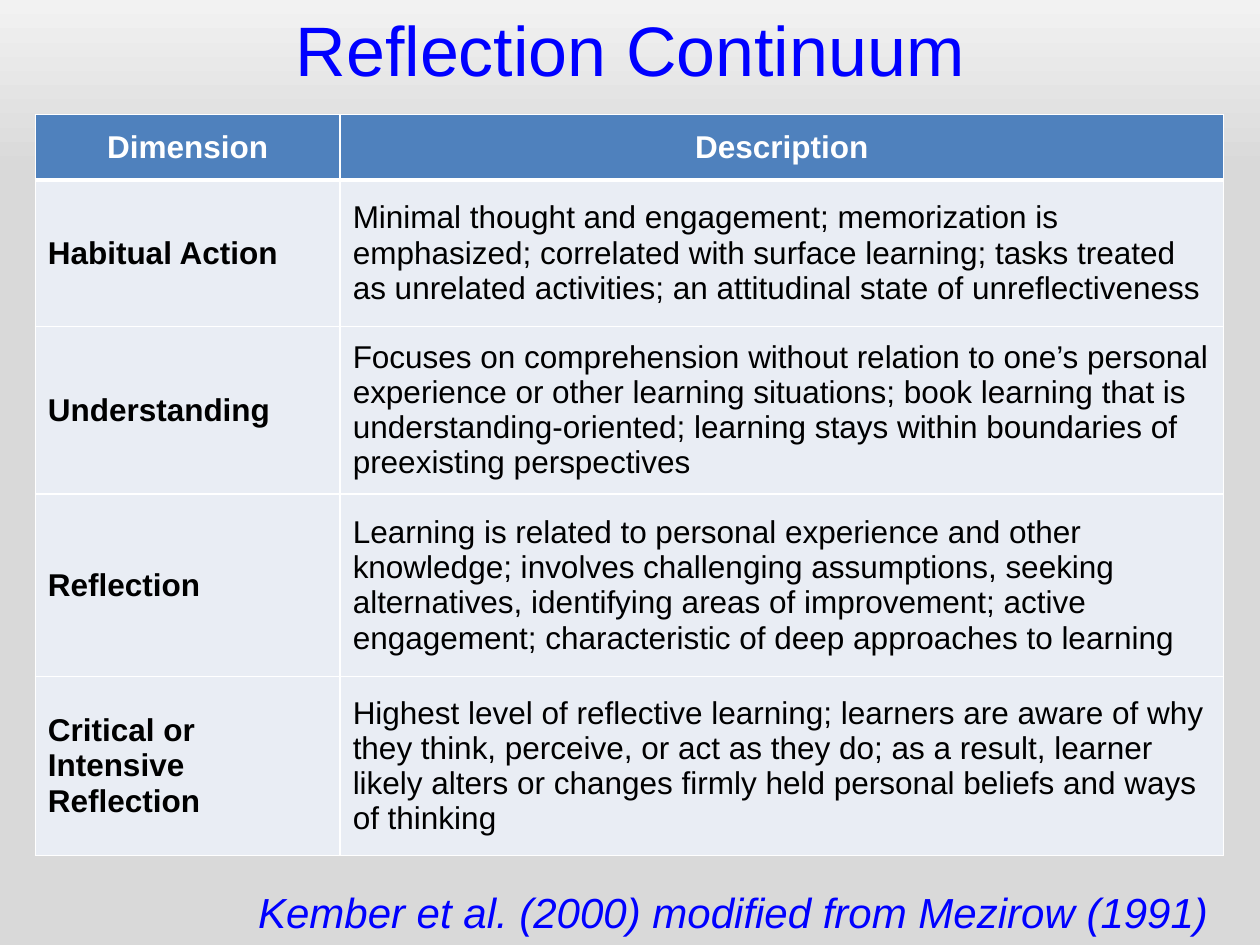
import dataclasses

import lxml.etree
import pptx
import pptx.dml.color
import pptx.enum.text
import pptx.oxml.ns
import pptx.util

Inches = pptx.util.Inches
Pt = pptx.util.Pt
ALIGN = pptx.enum.text.PP_ALIGN
ANCHOR = pptx.enum.text.MSO_ANCHOR
AUTO_SIZE = pptx.enum.text.MSO_AUTO_SIZE

FONT = "Arial"
COLORS = {
    "accent": "0000FF",
    "header": "4F81BD",
    "body": "E9EDF4",
    "border": "FFFFFF",
    "header_text": "FFFFFF",
    "body_text": "000000",
    "top": "F2F2F2",
    "base": "D9D9D9",
}
COLUMN_WIDTHS = (2.42, 7.01)
HEADER_HEIGHT = 0.52


@dataclasses.dataclass(frozen=True)
class Level:
    dimension: str
    description: str
    height: float


LEVELS = (
    Level(
        "Habitual Action",
        "Minimal thought and engagement; memorization is emphasized; "
        "correlated with surface learning; tasks treated as unrelated "
        "activities; an attitudinal state of unreflectiveness",
        1.16,
    ),
    Level(
        "Understanding",
        "Focuses on comprehension without relation to one’s personal "
        "experience or other learning situations; book learning that is "
        "understanding-oriented; learning stays within boundaries of "
        "preexisting perspectives",
        1.33,
    ),
    Level(
        "Reflection",
        "Learning is related to personal experience and other knowledge; "
        "involves challenging assumptions, seeking alternatives, identifying "
        "areas of improvement; active engagement; characteristic of deep "
        "approaches to learning",
        1.45,
    ),
    Level(
        "Critical or Intensive Reflection",
        "Highest level of reflective learning; learners are aware of why they "
        "think, perceive, or act as they do; as a result, learner likely "
        "alters or changes firmly held personal beliefs and ways of thinking",
        1.42,
    ),
)


def rgb(name: str) -> pptx.dml.color.RGBColor:
    return pptx.dml.color.RGBColor.from_string(COLORS[name])


def write(frame, text: str, size: int, color: str, align=ALIGN.LEFT,
          bold: bool = False, italic: bool = False) -> None:
    paragraph = frame.paragraphs[0]
    paragraph.alignment = align
    run = paragraph.add_run()
    run.text = text
    run.font.name = FONT
    run.font.size = Pt(size)
    run.font.bold = bold
    run.font.italic = italic
    run.font.color.rgb = rgb(color)


def set_borders(cell, bottom_width: int) -> None:
    qn = pptx.oxml.ns.qn
    properties = cell._tc.get_or_add_tcPr()
    widths = {"lnL": 1, "lnR": 1, "lnT": 1, "lnB": bottom_width}
    for position, (side, width) in enumerate(widths.items()):
        line = lxml.etree.Element(qn(f"a:{side}"), w=str(Pt(width)))
        fill = lxml.etree.SubElement(line, qn("a:solidFill"))
        lxml.etree.SubElement(fill, qn("a:srgbClr"), val=COLORS["border"])
        properties.insert(position, line)


def fill_cell(cell, text: str, header: bool, bold: bool) -> None:
    kind = "header" if header else "body"
    cell.vertical_anchor = ANCHOR.MIDDLE
    cell.fill.solid()
    cell.fill.fore_color.rgb = rgb(kind)
    set_borders(cell, 3 if header else 1)
    write(cell.text_frame, text, 18, f"{kind}_text",
          ALIGN.CENTER if header else ALIGN.LEFT, bold)


def paint_background(slide) -> None:
    fill = slide.background.fill
    fill.gradient()
    fill.gradient_angle = 270
    for stop, color, position in zip(fill.gradient_stops, ("top", "base"), (0, 0.18)):
        stop.color.rgb = rgb(color)
        stop.position = position


def add_title(slide) -> None:
    title = slide.shapes.title
    title.left, title.top = Inches(0), Inches(0)
    title.width, title.height = Inches(10), Inches(0.77)
    title.text_frame.vertical_anchor = ANCHOR.TOP
    title.text_frame.auto_size = AUTO_SIZE.SHAPE_TO_FIT_TEXT
    write(title.text_frame, "Reflection Continuum", 40, "accent", ALIGN.CENTER)


def add_continuum(slide) -> None:
    heights = [HEADER_HEIGHT, *(level.height for level in LEVELS)]
    rows = [("Dimension", "Description"),
            *((level.dimension, level.description) for level in LEVELS)]
    continuum = slide.shapes.add_table(
        len(rows), len(COLUMN_WIDTHS), Inches(0.28), Inches(0.91),
        Inches(sum(COLUMN_WIDTHS)), Inches(sum(heights))).table
    continuum.horz_banding = False
    for column, width in zip(continuum.columns, COLUMN_WIDTHS):
        column.width = Inches(width)
    for row, height in zip(continuum.rows, heights):
        row.height = Inches(height)
    for r, texts in enumerate(rows):
        for c, text in enumerate(texts):
            fill_cell(continuum.cell(r, c), text, r == 0, r == 0 or c == 0)


def add_citation(slide) -> None:
    citation = slide.shapes.add_textbox(
        Inches(1.95), Inches(6.99), Inches(7.9), Inches(0.5)).text_frame
    citation.word_wrap = False
    citation.auto_size = AUTO_SIZE.SHAPE_TO_FIT_TEXT
    write(citation, "Kember et al. (2000) modified from Mezirow (1991)",
          24, "accent", italic=True)


def main() -> None:
    deck = pptx.Presentation()
    deck.slide_width, deck.slide_height = Inches(10), Inches(7.5)
    slide = deck.slides.add_slide(deck.slide_layouts.get_by_name("Title Only"))
    paint_background(slide)
    add_title(slide)
    add_continuum(slide)
    add_citation(slide)
    deck.save("out.pptx")


if __name__ == "__main__":
    main()
